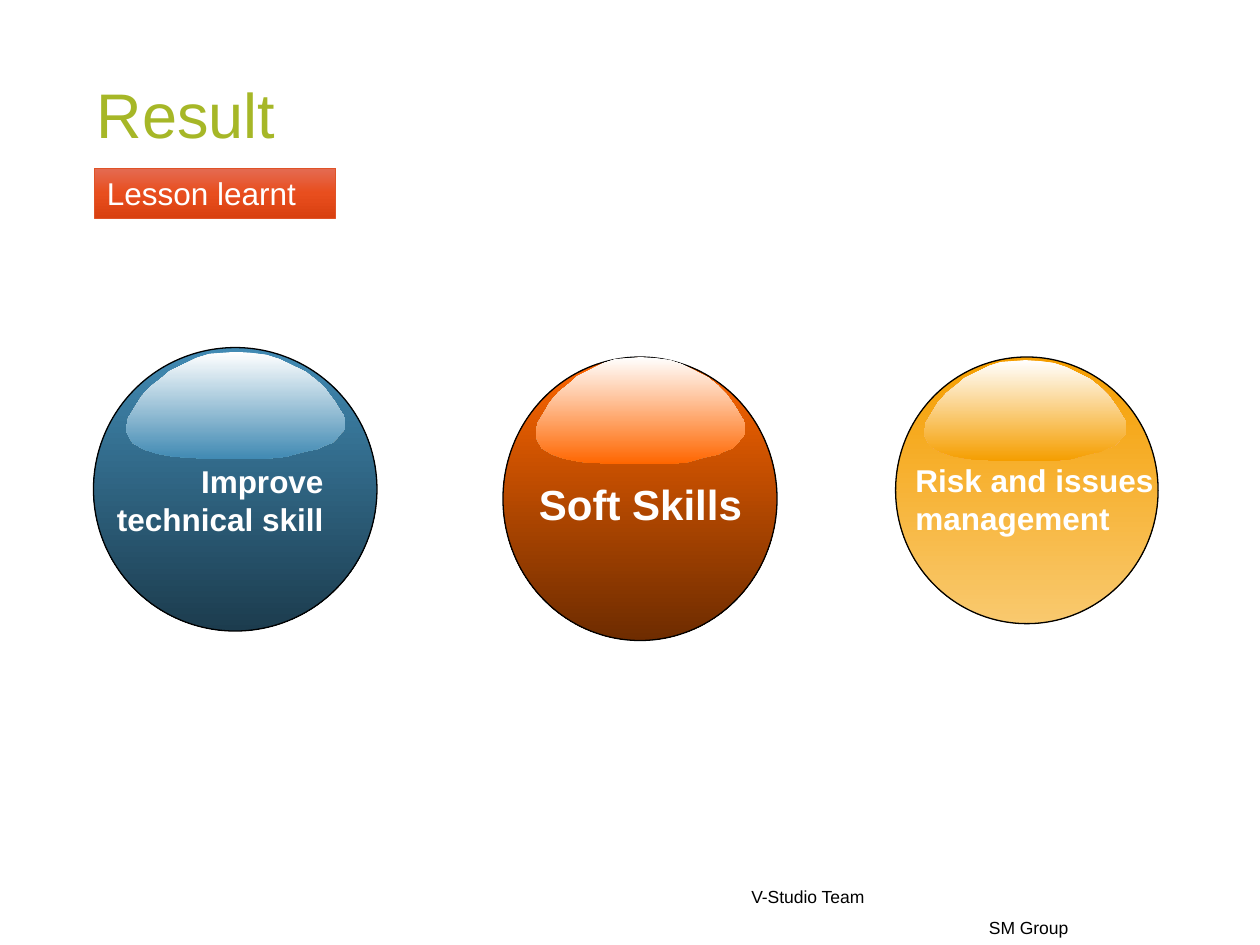
from copy import deepcopy

from pptx import Presentation
from pptx import util as u
from pptx.dml.color import RGBColor
from pptx.enum import shapes, text

COLUMNS, ROWS = 120, 90
COLORS = {
    "title": "A6B727", "black": "000000", "white": "FFFFFF",
    "label_top": "E46B52", "label_middle": "E84E1E", "label_bottom": "D94010", "label_line": "DF5327",
    "orange": "FF6600", "orange_end": "6E2C00",
    "yellow": "F59E00", "yellow_end": "F9C96E",
    "blue": "418AB3", "blue_end": "1C3C4E",
}
GLOSS_OUTLINE = [
    (98, 56), (100, 62), (100, 72), (98, 76), (96, 81), (94, 85), (90, 88), (87, 91),
    (82, 93), (78, 95), (73, 98), (68, 99), (62, 100), (36, 100), (31, 99), (22, 98),
    (14, 95), (8, 91), (3, 85), (1, 78), (0, 73), (1, 62), (4, 52), (7, 42), (11, 33),
    (16, 25), (20, 18), (26, 12), (32, 6), (38, 2), (44, 1), (50, 0), (57, 1), (64, 3),
    (70, 7), (76, 13), (82, 19), (87, 27), (91, 35), (95, 46),
]
BALLS = [
    {"color": "orange", "ball": (47.9, 34, 26.1, 27), "gloss": (51, 34, 20, 10.2),
     "label": "Soft Skills", "box": (50, 45, 22, 6.1), "size": 24, "align": "CENTER"},
    {"color": "yellow", "ball": (85.3, 34, 25, 25.4), "gloss": (88, 34.3, 19.3, 9.6),
     "label": "Risk and issues management", "box": (86, 43.3, 34, 8.5), "size": 18, "align": "LEFT"},
    {"color": "blue", "ball": (8.9, 33.1, 27, 27), "gloss": (12, 33.5, 20.9, 10.2),
     "label": "Improve technical skill", "box": (7, 43.4, 25, 8.5), "size": 18, "align": "RIGHT"},
]


class SlideBuilder:
    font_name = "Arial"

    def __init__(self, presentation):
        self.column = presentation.slide_width / COLUMNS
        self.row = presentation.slide_height / ROWS
        self.slide = presentation.slides.add_slide(presentation.slide_layouts[5])
        for placeholder in list(self.slide.placeholders):
            if placeholder != self.slide.shapes.title:
                placeholder.element.getparent().remove(placeholder.element)

    def place(self, box):
        left, top, width, height = box
        return [round(length) for length in
                (left * self.column, top * self.row, width * self.column, height * self.row)]

    def fill_text(self, shape, words, color, size, align="LEFT", anchor="MIDDLE", bold=False, spacing=1.0):
        frame = shape.text_frame
        frame.text = words
        paragraph = frame.paragraphs[0]
        formats = [
            (frame, {"word_wrap": True, "auto_size": text.MSO_AUTO_SIZE.NONE,
                     "vertical_anchor": text.MSO_ANCHOR[anchor]}),
            (paragraph, {"alignment": text.PP_ALIGN[align], "line_spacing": spacing}),
            (paragraph.font, {"name": self.font_name, "size": u.Pt(size), "bold": bold}),
        ]
        for target, values in formats:
            for name, value in values.items():
                setattr(target, name, value)
        paragraph.font.color.rgb = RGBColor.from_string(COLORS[color])

    def title(self, words, box):
        shape = self.slide.shapes.title
        for name, value in zip(("left", "top", "width", "height"), self.place(box)):
            setattr(shape, name, value)
        self.fill_text(shape, words, "title", 36, anchor="BOTTOM", spacing=0.85)

    def text_box(self, words, box, **style):
        shape = self.slide.shapes.add_textbox(*self.place(box))
        self.fill_text(shape, words, **style)

    def paint(self, shape, colors, line=None, line_width=0.75):
        shape.shadow.inherit = False
        shape.fill.gradient()
        shape.fill.gradient_angle = 270
        stops = shape.element.spPr.find(".//{*}gsLst")
        for _ in colors[2:]:
            stops.append(deepcopy(stops[-1]))
        for index, (stop, color) in enumerate(zip(shape.fill.gradient_stops, colors)):
            stop.position = index / (len(colors) - 1)
            stop.color.rgb = RGBColor.from_string(COLORS[color])
        if line:
            shape.line.color.rgb = RGBColor.from_string(COLORS[line])
            shape.line.width = u.Pt(line_width)
        else:
            shape.line.fill.background()

    def preset(self, kind, box, colors, line, line_width=0.75):
        shape = self.slide.shapes.add_shape(shapes.MSO_SHAPE[kind], *self.place(box))
        self.paint(shape, colors, line, line_width)
        return shape

    def gloss(self, box, color):
        left, top, width, height = self.place(box)
        builder = self.slide.shapes.build_freeform(*GLOSS_OUTLINE[0], scale=(width / 100, height / 100))
        builder.add_line_segments(GLOSS_OUTLINE[1:], close=True)
        self.paint(builder.convert_to_shape(left, top), ["white", color])

    def ball(self, color, ball, gloss, label, box, size, align):
        self.preset("OVAL", ball, [color, color + "_end"], "black")
        self.gloss(gloss, color)
        self.text_box(label, box, color="white", size=size, align=align, anchor="TOP", bold=True)


def main():
    presentation = Presentation()
    presentation.slide_width, presentation.slide_height = u.Inches(10), u.Inches(7.5)
    builder = SlideBuilder(presentation)
    builder.title("Result", (8, -1, 90, 16))
    builder.text_box("V-Studio Team", (68.3, 83.6, 15.2, 3.6), color="black", size=10, align="RIGHT")
    builder.text_box("SM Group", (93, 86.6, 16, 3.4), color="black", size=10)
    label = builder.preset("RECTANGLE", (9, 16, 23, 4.8),
                           ["label_top", "label_middle", "label_bottom"], "label_line", 0.5)
    builder.fill_text(label, "Lesson learnt", "white", 18)
    for ball in BALLS:
        builder.ball(**ball)
    presentation.save("out.pptx")


if __name__ == "__main__":
    main()
